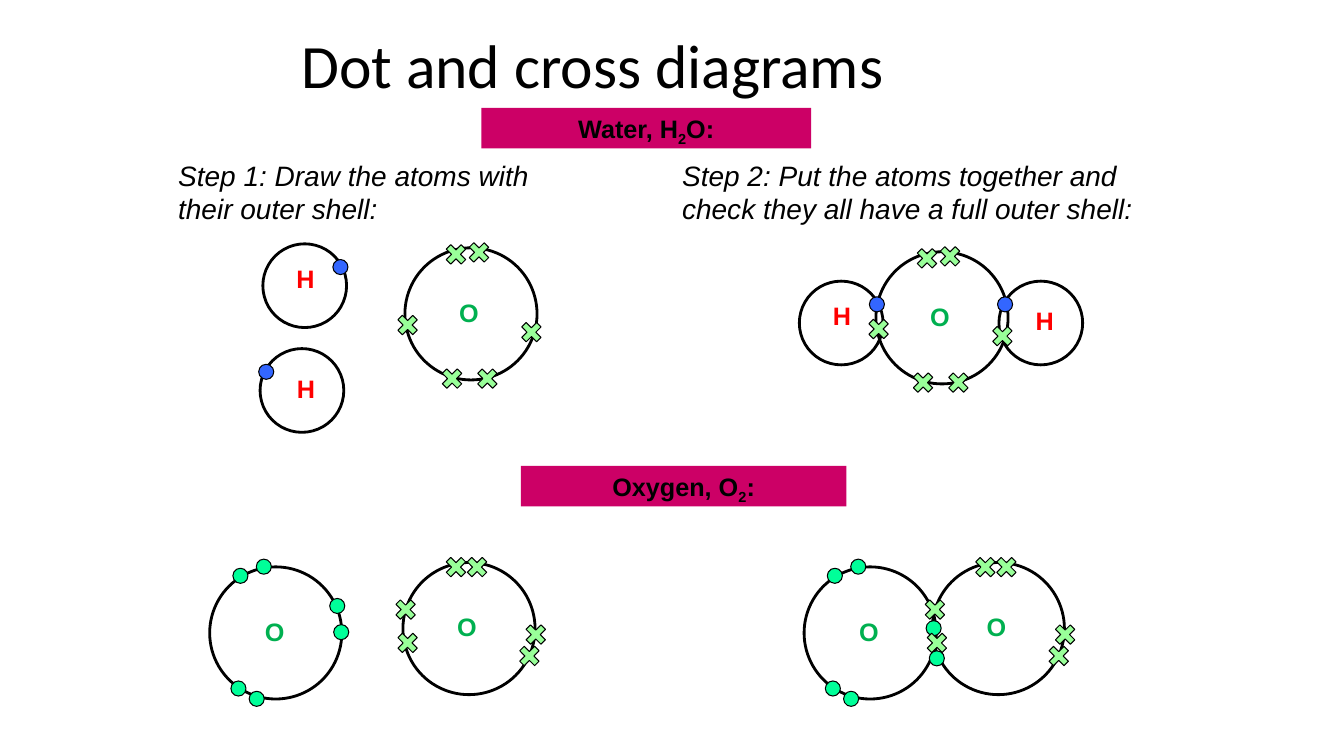
import pptx
import pptx.util
import pptx.dml.color
import pptx.enum.shapes
import pptx.enum.text

Cm, Pt = pptx.util.Cm, pptx.util.Pt
RGB = pptx.dml.color.RGBColor
SHAPE = pptx.enum.shapes.MSO_SHAPE
ALIGN = pptx.enum.text.PP_ALIGN
ANCHOR = pptx.enum.text.MSO_ANCHOR

BLACK = RGB(0x00, 0x00, 0x00)
MAGENTA = RGB(0xCC, 0x00, 0x66)
RED = RGB(0xFF, 0x00, 0x00)
GREEN = RGB(0x00, 0xB0, 0x50)
BLUE = RGB(0x33, 0x66, 0xFF)
MINT = RGB(0x00, 0xFF, 0x99)
PALE_GREEN = RGB(0x99, 0xFF, 0x99)

# All lengths are in centimetres; boxes are left, top, width, height.
TITLE = ("Dot and cross diagrams", (7.34, 0.53, 21.41, 2.39))
BANNERS = [
    (("Water, H", "2", "O:"), (12.13, 2.72, 8.31, 1.02)),
    (("Oxygen, O", "2", ":"), (13.13, 11.74, 8.2, 1.02)),
]
STEPS = [
    ("Step 1: Draw the atoms with their outer shell:", (4.24, 3.86, 10.64, 1.96)),
    ("Step 2: Put the atoms together and check they all have a full outer shell:",
     (16.94, 3.86, 12.7, 1.96)),
]

DOT, CROSS = 0.38, 0.53
LABEL_W, LABEL_H = 1.65, 1.02
ELEMENTS = {"H": (2.11, RED), "O": (3.33, GREEN)}  # shell diameter, label colour

# Atom kinds: element, label offset, electron type, electron offsets from the centre
OXYGEN_DOTS = [(-0.3, -1.67), (-0.89, -1.44), (-0.94, 1.4), (-0.48, 1.66)]
ATOMS = {
    "H dot right": ("H", (0.02, -0.18), "blue dot", [(0.9, -0.47)]),
    "H dot left": ("H", (0.1, -0.06), "blue dot", [(-0.9, -0.47)]),
    "O in water": ("O", (-0.05, -0.04), "cross",
                   [(-0.38, -1.5), (0.2, -1.55), (-1.6, 0.28),
                    (1.52, 0.46), (-0.48, 1.63), (0.41, 1.63)]),
    "O dots": ("O", (-0.03, -0.04), "mint dot",
               OXYGEN_DOTS + [(1.55, -0.68), (1.65, -0.02)]),
    "O dots bonded": ("O", (-0.03, -0.04), "mint dot",
                      OXYGEN_DOTS + [(1.6, -0.12), (1.68, 0.64)]),
    "O crosses": ("O", (-0.05, -0.04), "cross",
                  [(-1.55, 0.36), (-1.6, -0.48), (-0.33, -1.55),
                   (0.2, -1.55), (1.52, 0.69), (1.68, 0.15)]),
}
# Each diagram is one group of atoms with their centres
DIAGRAMS = [
    [("O in water", 23.74, 8.01), ("H dot right", 21.2, 8.14), ("H dot left", 26.23, 8.14)],
    [("O dots bonded", 21.93, 15.95), ("O crosses", 25.16, 15.84)],
    [("H dot right", 7.68, 7.2)],
    [("H dot left", 7.61, 9.84)],
    [("O in water", 11.87, 7.91)],
    [("O dots", 6.95, 15.95)],
    [("O crosses", 11.82, 15.84)],
]


def lengths(box):
    return [Cm(v) for v in box]


def centred(x, y, w, h):
    return lengths((x - w / 2, y - h / 2, w, h))


def add_mark(shapes, kind, x, y, size, fill=None, line=0.75):
    """Add a square-sized outlined shape centred on x, y."""
    sp = shapes.add_shape(kind, *centred(x, y, size, size))
    sp.shadow.inherit = False
    if fill is None:
        sp.fill.background()
    else:
        sp.fill.solid()
        sp.fill.fore_color.rgb = fill
    sp.line.color.rgb = BLACK
    sp.line.width = Pt(line)
    return sp


def add_electron(shapes, kind, x, y):
    if kind == "cross":
        sp = add_mark(shapes, SHAPE.CROSS, x, y, CROSS, PALE_GREEN)
        sp.adjustments[0] = 0.35
        sp.rotation = 135
    else:
        fill = BLUE if kind == "blue dot" else MINT
        add_mark(shapes, SHAPE.OVAL, x, y, DOT, fill)


def style(p, size, color, align=ALIGN.LEFT, bold=False, italic=False, name="Arial"):
    p.alignment = align
    p.font.name, p.font.size = name, Pt(size)
    p.font.bold, p.font.italic = bold, italic
    p.font.color.rgb = color


def add_label(shapes, text, box, *args, **kwargs):
    tf = shapes.add_textbox(*box).text_frame
    tf.word_wrap = True
    p = tf.paragraphs[0]
    p.text = text
    style(p, *args, **kwargs)


def add_banner(shapes, formula, box):
    """Add a filled bar whose middle text part is a subscript."""
    sp = shapes.add_shape(SHAPE.RECTANGLE, *lengths(box))
    sp.shadow.inherit = False
    sp.fill.solid()
    sp.fill.fore_color.rgb = MAGENTA
    sp.line.fill.background()
    tf = sp.text_frame
    tf.vertical_anchor = ANCHOR.TOP
    p = tf.paragraphs[0]
    for part in formula:
        p.add_run().text = part
    style(p, 18, BLACK, ALIGN.CENTER, bold=True)
    p.runs[1].font._element.set("baseline", "-25000")


def add_diagram(shapes, atoms):
    """Draw shells first, then labels, then dots, with crosses on top."""
    group = shapes.add_group_shape().shapes
    electrons = []
    for atom, x, y in atoms:
        element, (dx, dy), kind, offsets = ATOMS[atom]
        diameter = ELEMENTS[element][0]
        add_mark(group, SHAPE.OVAL, x, y, diameter, line=2)
        electrons += [(kind, x + ex, y + ey) for ex, ey in offsets]
    for atom, x, y in atoms:
        element, (dx, dy) = ATOMS[atom][:2]
        add_label(group, element, centred(x + dx, y + dy, LABEL_W, LABEL_H),
                  18, ELEMENTS[element][1], ALIGN.CENTER, bold=True)
    for electron in sorted(electrons, key=lambda e: e[0] == "cross"):
        add_electron(group, *electron)


def main():
    prs = pptx.Presentation()
    prs.slide_width, prs.slide_height = Cm(33.87), Cm(19.05)
    slide = prs.slides.add_slide(prs.slide_layouts[5])
    shapes = slide.shapes

    text, box = TITLE
    title = shapes.title
    title.left, title.top, title.width, title.height = lengths(box)
    title.text_frame.text = text
    title.text_frame.vertical_anchor = ANCHOR.MIDDLE
    p = title.text_frame.paragraphs[0]
    p.line_spacing = 0.9
    style(p, 44, BLACK, name="Calibri")

    for formula, box in BANNERS:
        add_banner(shapes, formula, box)
    for atoms in DIAGRAMS:
        add_diagram(shapes, atoms)
    for text, box in STEPS:
        add_label(shapes, text, lengths(box), 20, BLACK, italic=True)
    prs.save("out.pptx")


if __name__ == "__main__":
    main()
